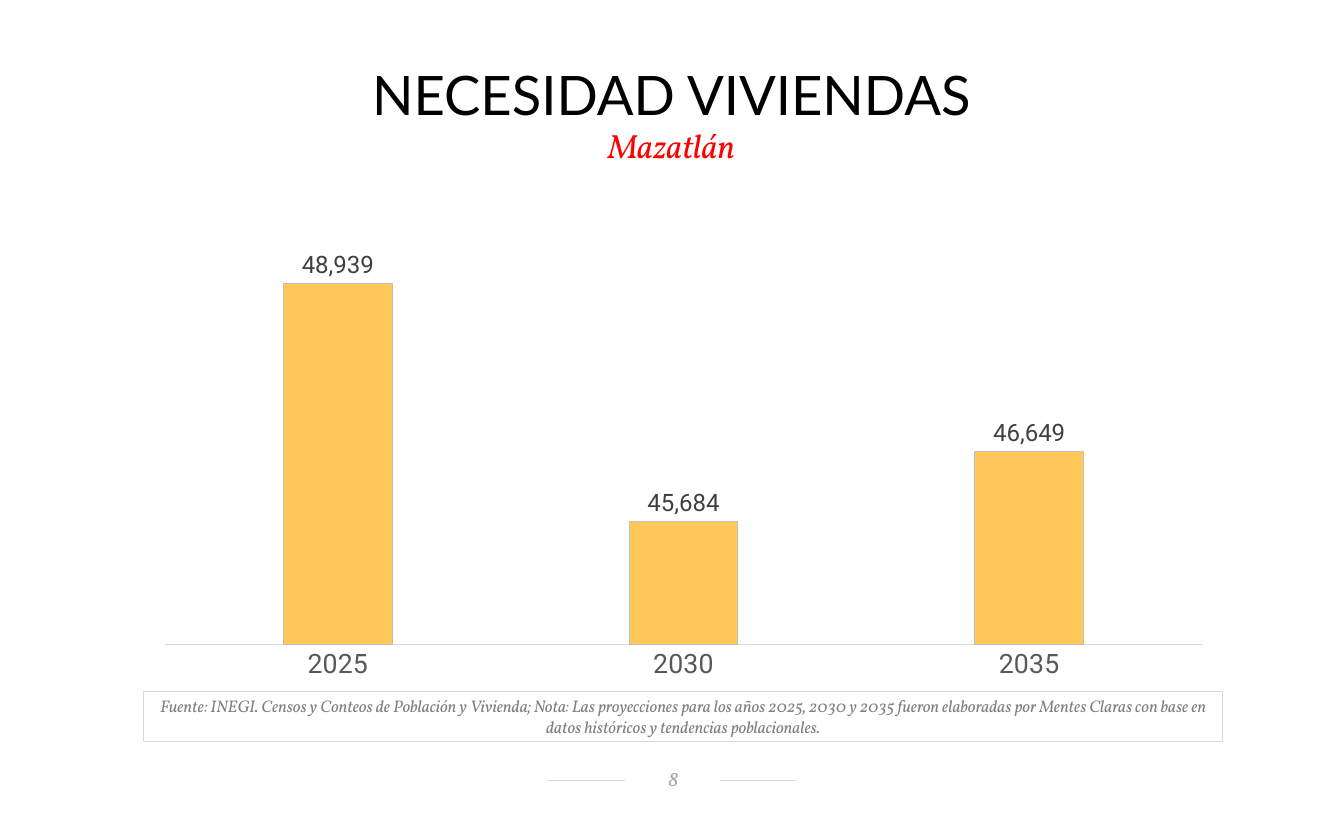
from lxml import etree
from pptx import Presentation
from pptx.chart.data import CategoryChartData
from pptx.dml.color import RGBColor
from pptx.enum.chart import XL_CHART_TYPE as CT, XL_LABEL_POSITION as LP, XL_TICK_MARK as TM
from pptx.enum.shapes import MSO_CONNECTOR as CONN, MSO_SHAPE as SHAPE
from pptx.enum.text import MSO_ANCHOR as ANCHOR, MSO_AUTO_SIZE as FIT, PP_ALIGN as ALIGN
from pptx.oxml import parse_xml
from pptx.oxml.ns import nsdecls, qn
from pptx.util import Pt

PX = 9525  # EMU per pixel
C = {"black": "000000", "white": "FFFFFF", "red": "FF0000", "bar": "FFC859",
     "bar_line": "BFBFBF", "rule": "D9D9D9", "note": "808080", "page": "A6A6A6",
     "axis": "595959", "label": "404040"}


def rgb(name):
    return RGBColor.from_string(C[name])


def add_text(text, box, font="Vollkorn", size=12, color="black", italic=True,
             insets=(10, 5, 10, 5), anchor=ANCHOR.TOP, fit=FIT.SHAPE_TO_FIT_TEXT,
             spacing=None, after=None, fill=None, line=None):
    box = [v * PX for v in box]
    if fill or line:
        sp = s.shapes.add_shape(SHAPE.RECTANGLE, *box)
        sp.shadow.inherit = False
    else:
        sp = s.shapes.add_textbox(*box)
    if fill:
        sp.fill.solid()
        sp.fill.fore_color.rgb = rgb(fill)
    else:
        sp.fill.background()
    if line:
        sp.line.color.rgb = rgb(line)
        sp.line.width = Pt(0.75)
    else:
        sp.line.fill.background()
    tf = sp.text_frame
    tf.word_wrap = True
    tf.auto_size = fit
    tf.vertical_anchor = anchor
    tf.margin_left, tf.margin_top, tf.margin_right, tf.margin_bottom = [v * PX for v in insets]
    p = tf.paragraphs[0]
    p.alignment = ALIGN.CENTER
    if spacing:
        p.line_spacing = spacing
    if after:
        p.space_after = Pt(after)
    r = p.add_run()
    r.text = text
    r.font.name, r.font.size, r.font.italic = font, Pt(size), italic
    r.font.color.rgb = rgb(color)


prs = Presentation()
prs.slide_width, prs.slide_height = 1344 * PX, 816 * PX
s = prs.slides.add_slide(prs.slide_layouts[6])

# Page number between two rules
rule = s.shapes.add_connector(CONN.STRAIGHT, 548 * PX, 781 * PX, 796 * PX, 781 * PX)
rule.line.color.rgb = rgb("rule")
rule.line.width = Pt(0.75)
etree.SubElement(rule._element.spPr, qn("a:effectLst"))
add_text("8", (625, 766, 95, 28), size=15.4, color="page", fill="white",
         insets=(11, 2, 9, 5), anchor=ANCHOR.MIDDLE, fit=FIT.NONE)

# Source note
add_text("Fuente: INEGI. Censos y Conteos de Población y Vivienda; Nota: Las proyecciones "
         "para los años 2025, 2030 y 2035 fueron elaboradas por Mentes Claras con base en "
         "datos históricos y tendencias poblacionales.",
         (143, 691, 1080, 51), size=12.6, color="note", line="rule")

# Title and subtitle
add_text("NECESIDAD VIVIENDAS", (47, 73, 1249, 58), font="Lato", size=40.8, italic=False,
         insets=(12, 6, 12, 6), spacing=0.7)
add_text("Mazatlán", (-34, 120, 1411, 51), size=25.2, color="red", after=4.2)

# Column chart
cd = CategoryChartData(number_format="#,##0")
cd.categories = ["2025", "2030", "2035"]
cd.add_series("Series 1", [48939, 45684, 46649])
W, H = 1080, 496
chart = s.shapes.add_chart(CT.COLUMN_CLUSTERED, 143 * PX, 195 * PX, W * PX, H * PX, cd).chart
chart.has_legend = False
chart.has_title = False
chart.font.name, chart.font.size = "Calibri", Pt(10)
chart.font.color.rgb = rgb("black")

# Axes
cat = chart.category_axis
cat.major_tick_mark = cat.minor_tick_mark = TM.NONE
cat.format.line.color.rgb = rgb("rule")
cat.format.line.width = Pt(0.75)
val = chart.value_axis
val.visible = False
val.has_major_gridlines = False
val.minimum_scale, val.maximum_scale = 44000, 50000

# Bars and value labels
plot = chart.plots[0]
plot.gap_width, plot.overlap, plot.vary_by_categories = 219, -27, False
bars = plot.series[0]
bars.format.fill.solid()
bars.format.fill.fore_color.rgb = rgb("bar")
bars.format.line.color.rgb = rgb("bar_line")
bars.format.line.width = Pt(0.75)
labels = bars.data_labels
labels.show_value = True
labels.position = LP.OUTSIDE_END
labels.number_format, labels.number_format_is_linked = "#,##0", False
for font, size, color in ((cat.tick_labels.font, 20, "axis"), (labels.font, 18, "label")):
    font.name, font.size = "Roboto", Pt(size)
    font.color.rgb = rgb(color)

# Fixed inner plot area
area = chart._chartSpace.chart.plotArea
for old in area.findall(qn("c:layout")):
    area.remove(old)
sizes = {"x": 22 / W, "y": 11 / H, "w": 1037 / W, "h": 439 / H}
area.insert(0, parse_xml(
    f'<c:layout {nsdecls("c")}><c:manualLayout><c:layoutTarget val="inner"/>'
    '<c:xMode val="edge"/><c:yMode val="edge"/>'
    + "".join(f'<c:{k} val="{v:.4f}"/>' for k, v in sizes.items())
    + "</c:manualLayout></c:layout>"))

prs.save("out.pptx")
